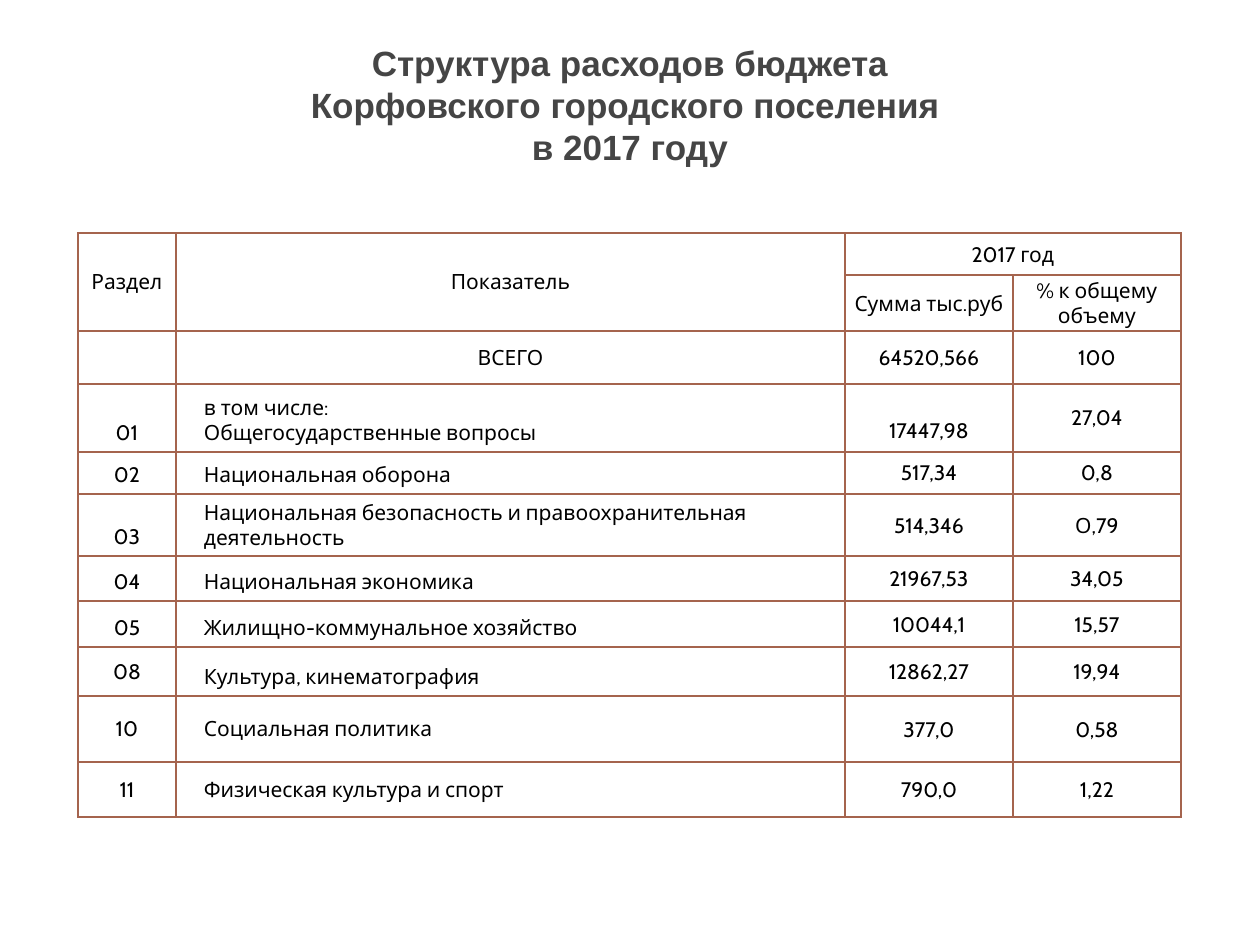
"""Build the slide with the 2017 budget expenditure table."""
import pptx
import pptx.dml.color
import pptx.enum.text
import pptx.oxml
import pptx.oxml.ns
import pptx.util
from lxml import etree

PX = 914400 / 126
COLORS = {"title": "454545", "text": "000000", "border": "A5644E"}
ALIGN = pptx.enum.text.PP_ALIGN
ANCHOR = pptx.enum.text.MSO_ANCHOR


def px(n):
    return pptx.util.Emu(round(n * PX))


def style_run(r, font, size, color, bold=False):
    r.font.name = font
    r.font.size = pptx.util.Pt(size)
    r.font.bold = bold
    r.font.color.rgb = pptx.dml.color.RGBColor.from_string(COLORS[color])


title = ["Структура расходов бюджета", "Корфовского городского поселения ", "в 2017 году"]
col_widths = [98, 669, 168, 168]
row_heights = [42, 56, 53, 68, 42, 42, 45, 46, 49, 66, 55]
rows = [
    ["Раздел", "Показатель", "2017 год", ""],
    ["", "", "Сумма тыс.руб", "% к общему объему"],
    ["", "ВСЕГО", "64520,566", "100"],
    ["01", "в том числе:\nОбщегосударственные вопросы", "17447,98", "27,04"],
    ["02", "Национальная оборона", "517,34", "0,8"],
    ["03", "Национальная безопасность и правоохранительная деятельность", "514,346", "О,79"],
    ["04", "Национальная экономика", "21967,53", "34,05"],
    ["05", "Жилищно-коммунальное хозяйство", "10044,1", "15,57"],
    ["08", "Культура, кинематография", "12862,27", "19,94"],
    ["10", "Социальная политика", "377,0", "0,58"],
    ["11", "Физическая культура и спорт", "790,0", "1,22"],
]
first_item = 3
bottom_cells = {(i, j) for i in range(3, 8) for j in (0, 1)} | {(8, 1)}

prs = pptx.Presentation()
prs.slide_width, prs.slide_height = px(1260), px(945)
s = prs.slides.add_slide(prs.slide_layouts[6])

sp = s.shapes.add_textbox(px(153), px(35), px(954), px(158))
tf = sp.text_frame
tf.word_wrap = True
tf.text = "\n".join(title)
for p in tf.paragraphs:
    p.alignment = ALIGN.CENTER
    p.line_spacing = pptx.util.Pt(24)
    style_run(p.runs[0], "Arial", 20, "title", bold=True)

frame = s.shapes.add_table(len(rows), len(col_widths), px(78), px(233),
                           px(sum(col_widths)), px(sum(row_heights)))
table = frame.table
table.first_row = table.horz_banding = False
for col, width in zip(table.columns, col_widths):
    col.width = px(width)
for row, height in zip(table.rows, row_heights):
    row.height = px(height)

for i, texts in enumerate(rows):
    for j, text in enumerate(texts):
        cell = table.cell(i, j)
        is_item = j == 1 and i >= first_item
        side, top, bottom = (13, 6, 6) if j < 2 else (1, 1, 0)
        cell.margin_left = px(28 if is_item else side)
        cell.margin_right = px(side)
        cell.margin_top = px(26 if (i, j) == (first_item, 2) else top)
        cell.margin_bottom = px(bottom)
        cell.vertical_anchor = ANCHOR.BOTTOM if (i, j) in bottom_cells else ANCHOR.MIDDLE
        cell.text_frame.text = text
        for p in cell.text_frame.paragraphs:
            p.alignment = ALIGN.LEFT if is_item else ALIGN.CENTER
            p._p.get_or_add_endParaRPr().set("sz", "1200")
            for r in p.runs:
                style_run(r, "Cabin", 12, "text")
        cell.fill.background()
        tcPr = cell._tc.get_or_add_tcPr()
        for k, edge in enumerate(("lnL", "lnR", "lnT", "lnB")):
            ln = etree.Element(pptx.oxml.ns.qn("a:" + edge), w="12700")
            fill = etree.SubElement(ln, pptx.oxml.ns.qn("a:solidFill"))
            etree.SubElement(fill, pptx.oxml.ns.qn("a:srgbClr"), val=COLORS["border"])
            tcPr.insert(k, ln)

table.cell(0, 0).merge(table.cell(1, 0))
table.cell(0, 1).merge(table.cell(1, 1))
table.cell(0, 2).merge(table.cell(0, 3))

prs.save("out.pptx")
